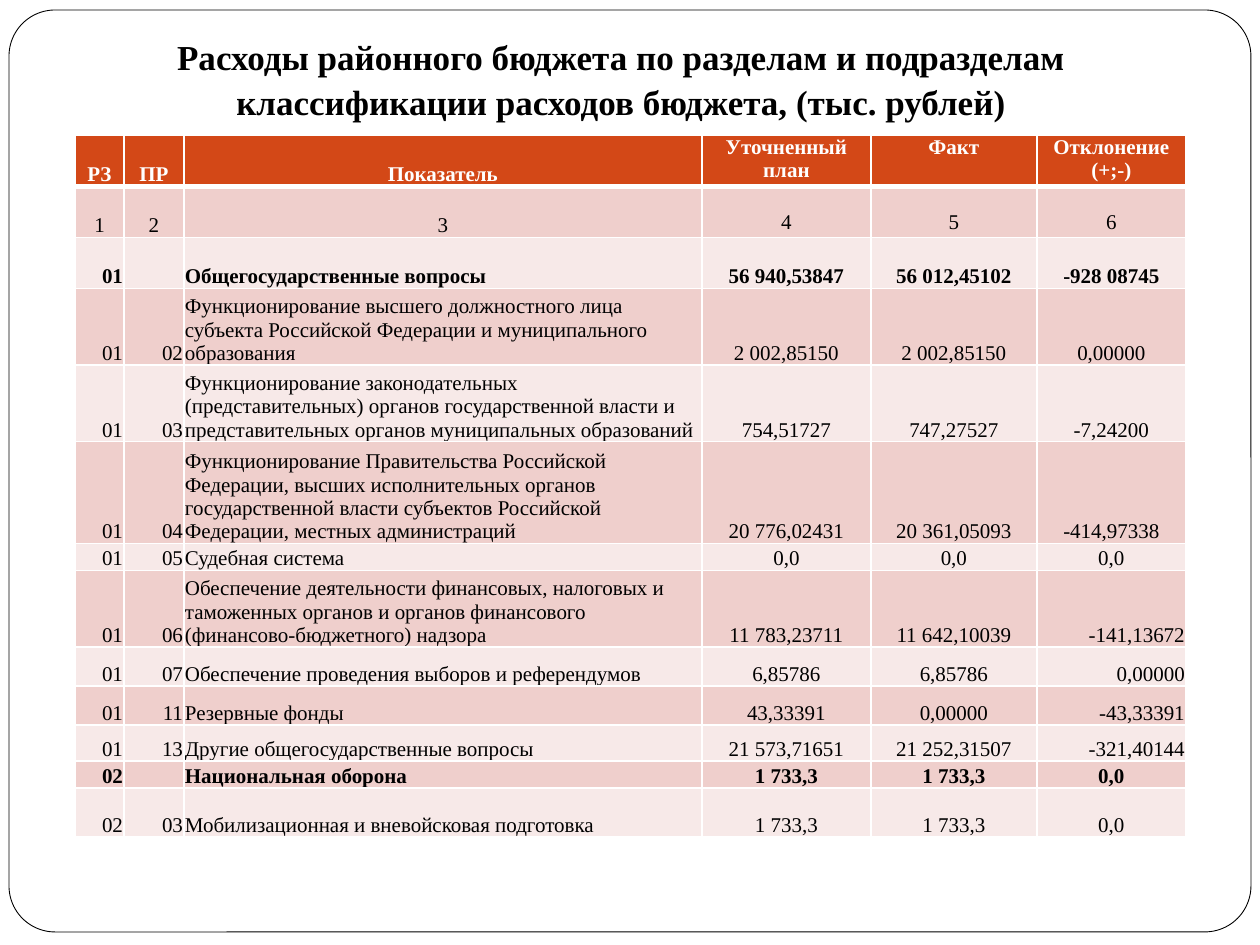
import lxml.etree
import pptx
import pptx.dml.color
import pptx.enum.shapes
import pptx.enum.text
import pptx.oxml.ns
import pptx.util

PX = 914400 / 126
FONT = "Times New Roman"
ALIGN = pptx.enum.text.PP_ALIGN
ANCHOR = pptx.enum.text.MSO_ANCHOR
QN = pptx.oxml.ns.qn

COLUMN_WIDTHS = [49, 60, 518, 169, 166, 149]
ROW_HEIGHTS = [51, 51, 51, 75, 76, 101, 27, 76, 39, 39, 36, 27, 49]
COLUMN_ALIGNS = [ALIGN.RIGHT, ALIGN.RIGHT, ALIGN.LEFT] + [ALIGN.CENTER] * 3
RIGHT_DEVIATIONS = {"06", "07", "11", "13"}
HEADER_FILL = "D34817"
BAND_FILLS = ["F7E9E8", "EFCFCC"]
TITLE = ("Расходы районного бюджета по разделам и подразделам "
         "классификации расходов бюджета, (тыс. рублей)")
BUDGET = [
    ("РЗ", "ПР", "Показатель", "Уточненный план", "Факт", "Отклонение (+;-)"),
    ("1", "2", "3", "4", "5", "6"),
    ("01", "", "Общегосударственные вопросы",
     "56 940,53847", "56 012,45102", "-928 08745"),
    ("01", "02", "Функционирование высшего должностного лица субъекта "
     "Российской Федерации и муниципального образования",
     "2 002,85150", "2 002,85150", "0,00000"),
    ("01", "03", "Функционирование законодательных (представительных) органов "
     "государственной власти и представительных органов муниципальных образований",
     "754,51727", "747,27527", "-7,24200"),
    ("01", "04", "Функционирование Правительства Российской Федерации, высших "
     "исполнительных органов государственной власти субъектов Российской "
     "Федерации, местных администраций",
     "20 776,02431", "20 361,05093", "-414,97338"),
    ("01", "05", "Судебная система", "0,0", "0,0", "0,0"),
    ("01", "06", "Обеспечение деятельности финансовых, налоговых и таможенных "
     "органов и органов финансового (финансово-бюджетного) надзора",
     "11 783,23711", "11 642,10039", "-141,13672"),
    ("01", "07", "Обеспечение проведения выборов и референдумов",
     "6,85786", "6,85786", "0,00000"),
    ("01", "11", "Резервные фонды", "43,33391", "0,00000", "-43,33391"),
    ("01", "13", "Другие общегосударственные вопросы",
     "21 573,71651", "21 252,31507", "-321,40144"),
    ("02", "", "Национальная оборона", "1 733,3", "1 733,3", "0,0"),
    ("02", "03", "Мобилизационная и вневойсковая подготовка",
     "1 733,3", "1 733,3", "0,0"),
]


def px(length):
    """Convert whole pixels to EMU."""
    return pptx.util.Emu(round(length * PX))


def color(hex_value):
    """Turn a hex string into a colour."""
    return pptx.dml.color.RGBColor.from_string(hex_value)


def apply(target, formats):
    """Set every attribute named in a dict of format values."""
    for name, value in formats.items():
        setattr(target, name, value)


def paint(part, hex_value):
    """Give a fill or a line format one solid colour."""
    part.solid()
    part.fore_color.rgb = color(hex_value)


def write(paragraph, text, size, hex_value, bold, align):
    """Write one formatted run into a paragraph."""
    paragraph.alignment = align
    if text:
        run = paragraph.add_run()
        run.text = text
        apply(run.font, {"name": FONT, "size": pptx.util.Pt(size), "bold": bold})
        run.font.color.rgb = color(hex_value)
    else:
        ending = lxml.etree.SubElement(paragraph._p, QN("a:endParaRPr"))
        ending.set("sz", str(size * 100))


def border(cell, bottom_width):
    """Draw white borders around a cell."""
    properties = cell._tc.get_or_add_tcPr()
    for side, width in {"L": 1, "R": 1, "T": 1, "B": bottom_width}.items():
        edge = lxml.etree.SubElement(properties, QN(f"a:ln{side}"),
                                     w=str(pptx.util.Pt(width)))
        solid = lxml.etree.SubElement(edge, QN("a:solidFill"))
        lxml.etree.SubElement(solid, QN("a:srgbClr"), val="FFFFFF")


def add_frame(slide, box):
    """Place the rounded page frame."""
    frame = slide.shapes.add_shape(
        pptx.enum.shapes.MSO_SHAPE.ROUNDED_RECTANGLE, *map(px, box))
    frame.adjustments[0] = 0.05
    frame.shadow.inherit = False
    paint(frame.fill, "FFFFFF")
    paint(frame.line.fill, "000000")
    frame.line.width = pptx.util.Pt(0.5)


def add_title(slide, box):
    """Place the heading at the bottom of its box."""
    heading = slide.shapes.add_textbox(*map(px, box)).text_frame
    apply(heading, {
        "word_wrap": True, "vertical_anchor": ANCHOR.BOTTOM,
        "margin_left": px(13), "margin_right": px(13),
        "margin_top": px(6), "margin_bottom": px(13),
    })
    heading.paragraphs[0].line_spacing = 1.08
    write(heading.paragraphs[0], TITLE, 20, "000000", True, ALIGN.CENTER)


def fill_cell(cell, text, row, column, section):
    """Format one budget cell by its row and column."""
    header = row == 0
    numbering = row == 1
    top_anchored = row < 2 and column > 2
    align = ALIGN.CENTER if row < 2 else COLUMN_ALIGNS[column]
    if column == 5 and section in RIGHT_DEVIATIONS:
        align = ALIGN.RIGHT
    apply(cell, {
        "vertical_anchor": ANCHOR.TOP if top_anchored else ANCHOR.BOTTOM,
        "margin_left": px(1), "margin_right": px(1), "margin_bottom": 0,
        "margin_top": px(24 if numbering and top_anchored else 1),
    })
    border(cell, 3 if header else 1)
    paint(cell.fill, HEADER_FILL if header else BAND_FILLS[row % 2])
    write(cell.text_frame.paragraphs[0], text, 12,
          "FFFFFF" if header else "000000", header or not section, align)


def add_budget(slide, left, top):
    """Place the budget table with its top left corner at the given point."""
    box = (left, top, sum(COLUMN_WIDTHS), sum(ROW_HEIGHTS))
    budget = slide.shapes.add_table(
        len(ROW_HEIGHTS), len(COLUMN_WIDTHS), *map(px, box)).table
    for column, width in zip(budget.columns, COLUMN_WIDTHS):
        column.width = px(width)
    for row, height in zip(budget.rows, ROW_HEIGHTS):
        row.height = px(height)
    for row, entries in enumerate(BUDGET):
        for column, text in enumerate(entries):
            fill_cell(budget.cell(row, column), text, row, column, entries[1])


def main():
    """Build the slide and save it."""
    deck = pptx.Presentation()
    apply(deck, {"slide_width": px(1260), "slide_height": px(945)})
    slide = deck.slides.add_slide(deck.slide_layouts[6])
    add_frame(slide, (9, 10, 1242, 922))
    add_title(slide, (54, 26, 1134, 110))
    add_budget(slide, 75, 135)
    deck.save("out.pptx")


if __name__ == "__main__":
    main()
